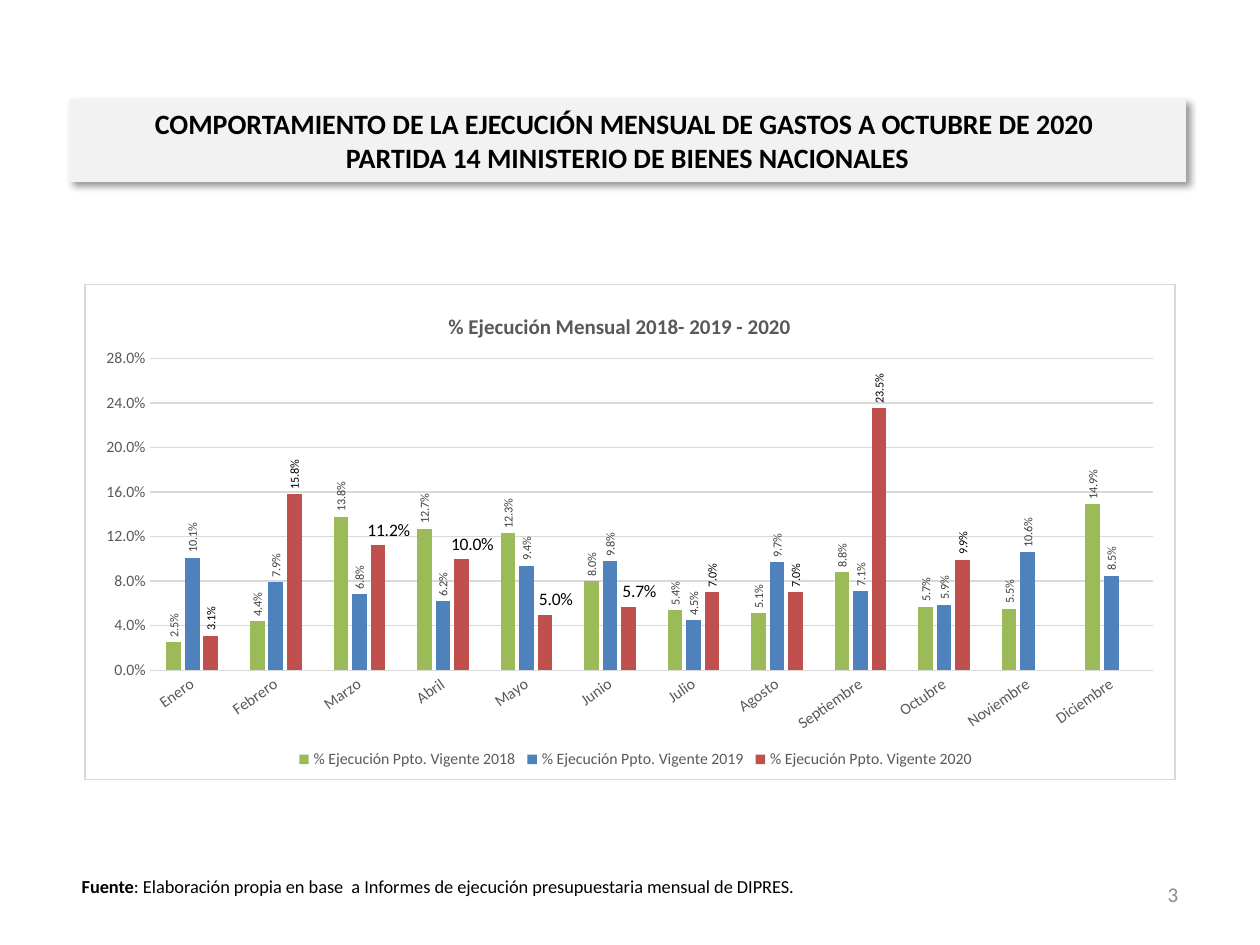
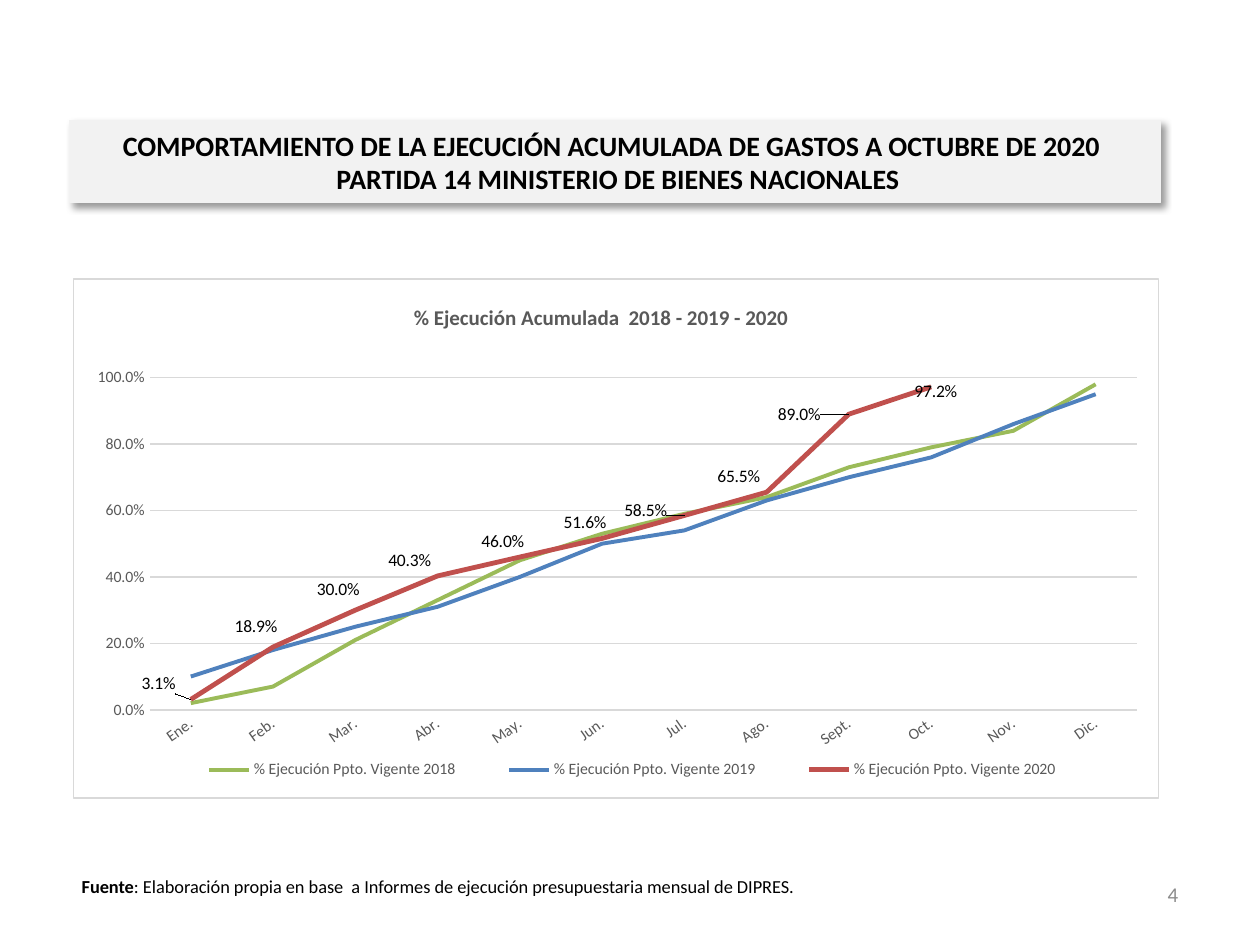
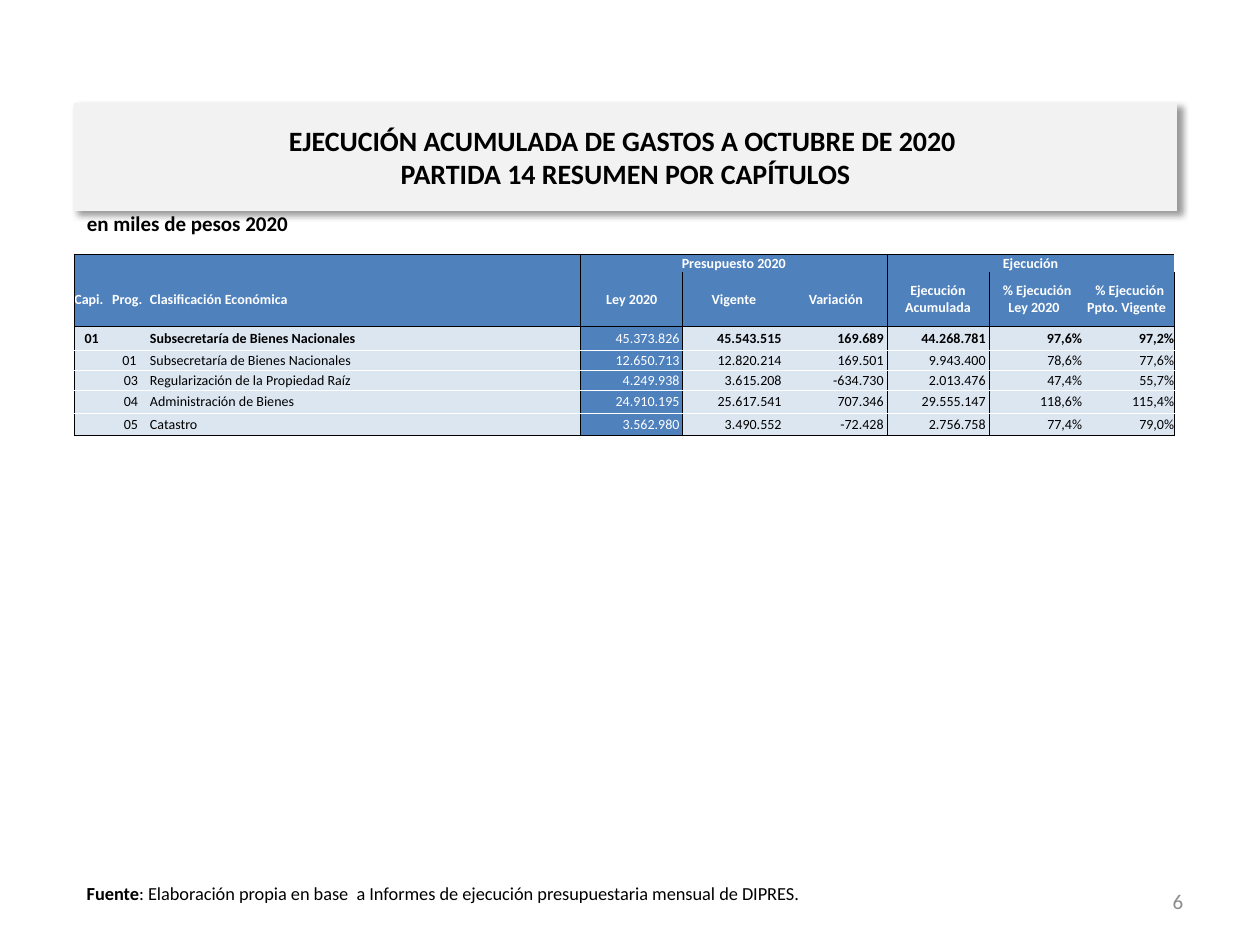
from copy import deepcopy

from pptx import Presentation
from pptx.chart.data import CategoryChartData
from pptx.dml.color import RGBColor
from pptx.enum.chart import (XL_CHART_TYPE, XL_LABEL_POSITION, XL_LEGEND_POSITION,
                             XL_MARKER_STYLE, XL_TICK_MARK)
from pptx.enum.shapes import MSO_SHAPE
from pptx.enum.text import MSO_ANCHOR, PP_ALIGN
from pptx.oxml import parse_xml
from pptx.oxml.ns import nsdecls, qn
from pptx.util import Pt

PX = 9144  # 100 px to the inch
FONT = "Calibri"
BLACK, WHITE = "000000", "FFFFFF"
BAND, RULE, AXIS_TEXT, PAGE_NUMBER = "F2F2F2", "D9D9D9", "595959", "8C8C8C"
GREEN, BLUE, RED, PALE_BLUE = "9BBB59", "4F81BD", "C0504D", "DCE6F1"
NO_TABLE_STYLE = "{2D5ABB26-0587-4C30-8999-92F81FD0307C}"
rgb = RGBColor.from_string


def write(frame, text, size, color=BLACK, bold=False, align=PP_ALIGN.LEFT):
    """Append text to the last paragraph; each further line starts a new one."""
    for number, line in enumerate(text.split("\n")):
        paragraph = frame.add_paragraph() if number else frame.paragraphs[-1]
        paragraph.alignment = align
        span = paragraph.add_run()
        span.text = line
        span.font.name = FONT
        span.font.size = Pt(size)
        span.font.bold = bold
        span.font.color.rgb = rgb(color)


def place(parent, index, modes="", **fractions):
    """Give a chart part a manual layout in fractions of the chart."""
    for old in parent.findall(qn("c:layout")):
        parent.remove(old)
    values = "".join(f'<c:{name} val="{value}"/>' for name, value in fractions.items())
    parent.insert(index, parse_xml(
        f'<c:layout {nsdecls("c")}><c:manualLayout>{modes}{values}'
        "</c:manualLayout></c:layout>"))


deck = Presentation()
deck.slide_width, deck.slide_height = 1000 * PX, 750 * PX

# Title band, source line and page number
page_specs = [
    ("3", "COMPORTAMIENTO DE LA EJECUCIÓN MENSUAL DE GASTOS A OCTUBRE DE 2020 \n"
          "PARTIDA 14 MINISTERIO DE BIENES NACIONALES", (55, 79, 886, 65), (55, 690)),
    ("4", "COMPORTAMIENTO DE LA EJECUCIÓN ACUMULADA DE GASTOS A OCTUBRE DE 2020 \n"
          " PARTIDA 14 MINISTERIO DE BIENES NACIONALES", (55, 96, 866, 65), (55, 690)),
    ("6", "EJECUCIÓN ACUMULADA DE GASTOS A OCTUBRE DE 2020 \n"
          "PARTIDA 14 RESUMEN POR CAPÍTULOS", (59, 82, 875, 85), (59, 695)),
]
pages = []
for number, title, band_box, (left, top) in page_specs:
    page = deck.slides.add_slide(deck.slide_layouts[6])
    pages.append(page)

    box = page.shapes.add_textbox((left + 657) * PX, top * PX, 233 * PX, 40 * PX)
    box.text_frame.word_wrap = True
    box.text_frame.vertical_anchor = MSO_ANCHOR.MIDDLE
    write(box.text_frame, number, 12, PAGE_NUMBER, align=PP_ALIGN.RIGHT)

    box = page.shapes.add_textbox(left * PX, top * PX, 866 * PX, 40 * PX)
    box.text_frame.word_wrap = True
    write(box.text_frame, "Fuente", 10.5, bold=True)
    write(box.text_frame, ": Elaboración propia en base  a Informes de ejecución "
                          "presupuestaria mensual de DIPRES.", 10.5)

    band = page.shapes.add_shape(MSO_SHAPE.RECTANGLE, *[side * PX for side in band_box])
    band.fill.solid()
    band.fill.fore_color.rgb = rgb(BAND)
    band.line.color.rgb = rgb(BAND)
    band.line.width = Pt(0.75)
    band.shadow.inherit = False
    band._element.spPr.find(qn("a:effectLst")).append(parse_xml(
        f'<a:outerShdw {nsdecls("a")} blurRad="50800" dist="38100" dir="2700000" '
        f'algn="tl" rotWithShape="0"><a:srgbClr val="{BLACK}"><a:alpha val="40000"/>'
        "</a:srgbClr></a:outerShdw>"))
    frame = band.text_frame
    frame.word_wrap = True
    frame.vertical_anchor = MSO_ANCHOR.MIDDLE
    frame.margin_left = frame.margin_right = 11 * PX
    frame.margin_top = frame.margin_bottom = 5 * PX
    write(frame, title, 16, bold=True, align=PP_ALIGN.CENTER)

# Charts of monthly and accumulated execution
chart_specs = [
    dict(
        page=pages[0], kind=XL_CHART_TYPE.COLUMN_CLUSTERED, box=(67, 225, 866, 394),
        title="% Ejecución Mensual 2018- 2019 - 2020",
        categories="Enero Febrero Marzo Abril Mayo Junio Julio Agosto Septiembre "
                   "Octubre Noviembre Diciembre",
        values=[
            [.025, .044, .138, .127, .123, .08, .054, .051, .088, .057, .055, .149],
            [.101, .079, .068, .062, .094, .098, .045, .097, .071, .059, .106, .085],
            [.031, .158, .112, .1, .05, .057, .07, .07, .235, .099]],
        maximum=0.28, step=0.04,
        title_at=dict(x=.33, y=.05), plot_at=dict(x=.06, y=.15, w=.92, h=.63),
        legend_at=dict(x=.19, y=.95, w=.63, h=.04),
        label_shifts={point: (.01, 0) for point in range(2, 6)}),
    dict(
        page=pages[1], kind=XL_CHART_TYPE.LINE, box=(58, 221, 862, 413),
        title="% Ejecución Acumulada  2018 - 2019 - 2020",
        categories="Ene. Feb. Mar. Abr. May. Jun. Jul. Ago. Sept. Oct. Nov. Dic.",
        values=[
            [.02, .07, .21, .33, .45, .53, .59, .64, .73, .79, .84, .98],
            [.1, .18, .25, .31, .4, .5, .54, .63, .7, .76, .86, .95],
            [.031, .189, .3, .403, .46, .516, .585, .655, .89, .972]],
        maximum=1, step=0.2,
        title_at=dict(x=.31, y=.04), plot_at=dict(x=.07, y=.19, w=.91, h=.64),
        legend_at=dict(x=.08, y=.92, w=.87, h=.05),
        label_shifts=dict(enumerate([
            (-.05, -.03), (-.04, -.04), (-.04, -.04), (-.05, -.03), (-.04, -.03),
            (-.04, -.03), (-.06, -.01), (-.05, -.03), (-.07, 0), (-.02, .01)]))),
]
EDGE_MODES = '<c:xMode val="edge"/><c:yMode val="edge"/>'
for spec in chart_specs:
    is_column = spec["kind"] == XL_CHART_TYPE.COLUMN_CLUSTERED
    data = CategoryChartData(number_format="0.0%")
    data.categories = spec["categories"].split()
    for year, values in zip((2018, 2019, 2020), spec["values"]):
        data.add_series(f"% Ejecución Ppto. Vigente {year}", values)
    chart = spec["page"].shapes.add_chart(
        spec["kind"], *[side * PX for side in spec["box"]], data).chart
    chart.font.name = FONT
    chart.font.size = Pt(10)
    chart_space = chart._chartSpace
    chart_space.find(qn("c:chart")).addnext(parse_xml(
        f'<c:spPr {nsdecls("c", "a")}><a:solidFill><a:srgbClr val="{WHITE}"/></a:solidFill>'
        f'<a:ln w="9525"><a:solidFill><a:srgbClr val="{RULE}"/></a:solidFill></a:ln></c:spPr>'))

    write(chart.chart_title.text_frame, spec["title"], 12, AXIS_TEXT, True, PP_ALIGN.CENTER)
    chart.has_legend = True
    chart.legend.position = XL_LEGEND_POSITION.BOTTOM
    chart.legend.include_in_layout = False
    category_axis, value_axis = chart.category_axis, chart.value_axis
    for part in (chart.legend, category_axis.tick_labels, value_axis.tick_labels):
        part.font.name = FONT
        part.font.size = Pt(9)
        part.font.color.rgb = rgb(AXIS_TEXT)
    for axis in (category_axis, value_axis):
        axis.major_tick_mark = axis.minor_tick_mark = XL_TICK_MARK.NONE
    category_axis._element.xpath("c:txPr/a:bodyPr")[0].set("rot", "-2100000")
    category_axis.format.line.color.rgb = rgb(RULE)
    category_axis.format.line.width = Pt(0.75 if is_column else 1)
    value_axis.format.line.fill.background()
    value_axis.minimum_scale = 0
    value_axis.maximum_scale = spec["maximum"]
    value_axis.major_unit = spec["step"]
    value_axis.tick_labels.number_format = "0.0%"
    value_axis.tick_labels.number_format_is_linked = False
    value_axis.major_gridlines.format.line.color.rgb = rgb(RULE)
    value_axis.major_gridlines.format.line.width = Pt(0.75)

    place(chart_space.xpath("c:chart/c:title")[0], 1, EDGE_MODES, **spec["title_at"])
    place(chart_space.xpath("c:chart/c:legend")[0], 1, EDGE_MODES, **spec["legend_at"])
    place(chart_space.xpath("c:chart/c:plotArea")[0], 0,
          '<c:layoutTarget val="inner"/>' + EDGE_MODES, **spec["plot_at"])

    plot = chart.plots[0]
    plot.vary_by_categories = False
    if is_column:
        plot.gap_width, plot.overlap = 219, -27
    for series, color in zip(plot.series, (GREEN, BLUE, RED)):
        is_current = color == RED
        if is_column:
            series.format.fill.solid()
            series.format.fill.fore_color.rgb = rgb(color)
            series.invert_if_negative = False
        else:
            series.format.line.color.rgb = rgb(color)
            series.format.line.width = Pt(2.75 if is_current else 2.25)
            series.marker.style = XL_MARKER_STYLE.NONE
            series.smooth = False
            if not is_current:
                continue
        labels = series.data_labels
        labels.show_value = True
        labels.number_format = "0.0%"
        labels.number_format_is_linked = False
        labels.position = (XL_LABEL_POSITION.OUTSIDE_END if is_column
                           else XL_LABEL_POSITION.RIGHT)
        labels.font.name = FONT
        labels.font.size = Pt(7)
        labels.font.color.rgb = rgb(BLACK if is_current else "404040")
        label_list = labels._element
        if is_column:
            label_list.xpath("c:txPr/a:bodyPr")[0].set("rot", "-5400000")
        if is_current:
            for point, (shift_x, shift_y) in spec["label_shifts"].items():
                series.points[point].data_label.position = labels.position
                label = label_list.xpath(f'c:dLbl[c:idx/@val="{point}"]')[0]
                place(label, 1, x=shift_x, y=shift_y)
                label.insert(2, deepcopy(label_list.find(qn("c:numFmt"))))
                label.insert(3, deepcopy(label_list.find(qn("c:txPr"))))

# Table of chapters
page = pages[2]
box = page.shapes.add_textbox(59 * PX, 162 * PX, 882 * PX, 40 * PX)
box.text_frame.word_wrap = True
write(box.text_frame, "en miles de pesos 2020", 12, bold=True)

column_widths = [30, 30, 342, 81, 81, 81, 81, 74, 73]
row_heights = [14, 43, 19, 16, 16, 18, 18]
rows = [
    ["", "", "", "Presupuesto 2020", "", "", "Ejecución", "", ""],
    ["Capi.", "Prog.", "Clasificación Económica", "Ley 2020", "Vigente", "Variación",
     "Ejecución Acumulada", " % Ejecución Ley 2020 ", " % Ejecución Ppto. Vigente "],
    ["01 ", "", "Subsecretaría de Bienes Nacionales", "45.373.826 ", "45.543.515 ",
     "169.689 ", "44.268.781 ", "97,6%", "97,2%"],
    ["", "01 ", "Subsecretaría de Bienes Nacionales", "12.650.713 ", "12.820.214 ",
     "169.501 ", "9.943.400 ", "78,6%", "77,6%"],
    ["", "03", "Regularización de la Propiedad Raíz", "4.249.938 ", "3.615.208 ",
     "-634.730 ", "2.013.476 ", "47,4%", "55,7%"],
    ["", "04", "Administración de Bienes", "24.910.195 ", "25.617.541 ",
     "707.346 ", "29.555.147 ", "118,6%", "115,4%"],
    ["", "05", "Catastro", "3.562.980 ", "3.490.552 ",
     "-72.428 ", "2.756.758 ", "77,4%", "79,0%"],
]
table_frame = page.shapes.add_table(
    len(rows), len(column_widths), 59 * PX, 202 * PX,
    sum(column_widths) * PX, sum(row_heights) * PX)
table = table_frame.table
table.first_row = table.horz_banding = False
table_frame._element.xpath(".//a:tableStyleId")[0].text = NO_TABLE_STYLE
for column, width in zip(table.columns, column_widths):
    column.width = width * PX
for row, height in zip(table.rows, row_heights):
    row.height = height * PX
for first in (3, 6):
    table.cell(0, first).merge(table.cell(0, first + 2))

HEADER_ALIGN = [PP_ALIGN.LEFT] * 3 + [PP_ALIGN.CENTER] * 6
BODY_ALIGN = [PP_ALIGN.CENTER] * 2 + [PP_ALIGN.JUSTIFY] + [PP_ALIGN.RIGHT] * 6
last_row = len(rows) - 1
for r, texts in enumerate(rows):
    is_header = r < 2
    for c, text in enumerate(texts):
        cell = table.cell(r, c)
        is_blue = is_header or c == 3
        cell.fill.solid()
        cell.fill.fore_color.rgb = rgb(BLUE if is_blue else PALE_BLUE)
        cell.margin_left = cell.margin_right = cell.margin_top = cell.margin_bottom = 0
        cell.vertical_anchor = MSO_ANCHOR.MIDDLE if r else MSO_ANCHOR.BOTTOM
        if text:
            write(cell.text_frame, text, 8, WHITE if is_blue else BLACK,
                  bold=is_header or (r == 2 and c != 3),
                  align=(HEADER_ALIGN if is_header else BODY_ALIGN)[c])
        cell.text_frame.paragraphs[0]._p.get_or_add_endParaRPr().set("sz", "800")

        borders = {}
        if c % 3 == 0:
            borders["lnL"] = BLACK
        if c % 3 == 2:
            borders["lnR"] = BLACK
        if r != 1:
            borders["lnT"] = BLACK if r in (0, 2) else WHITE
        if r != 0:
            borders["lnB"] = BLACK if r in (1, last_row) else WHITE
        properties = cell._tc.get_or_add_tcPr()
        for index, (edge, color) in enumerate(borders.items()):
            properties.insert(index, parse_xml(
                f'<a:{edge} {nsdecls("a")} w="6350"><a:solidFill>'
                f'<a:srgbClr val="{color}"/></a:solidFill></a:{edge}>'))

deck.save("out.pptx")
